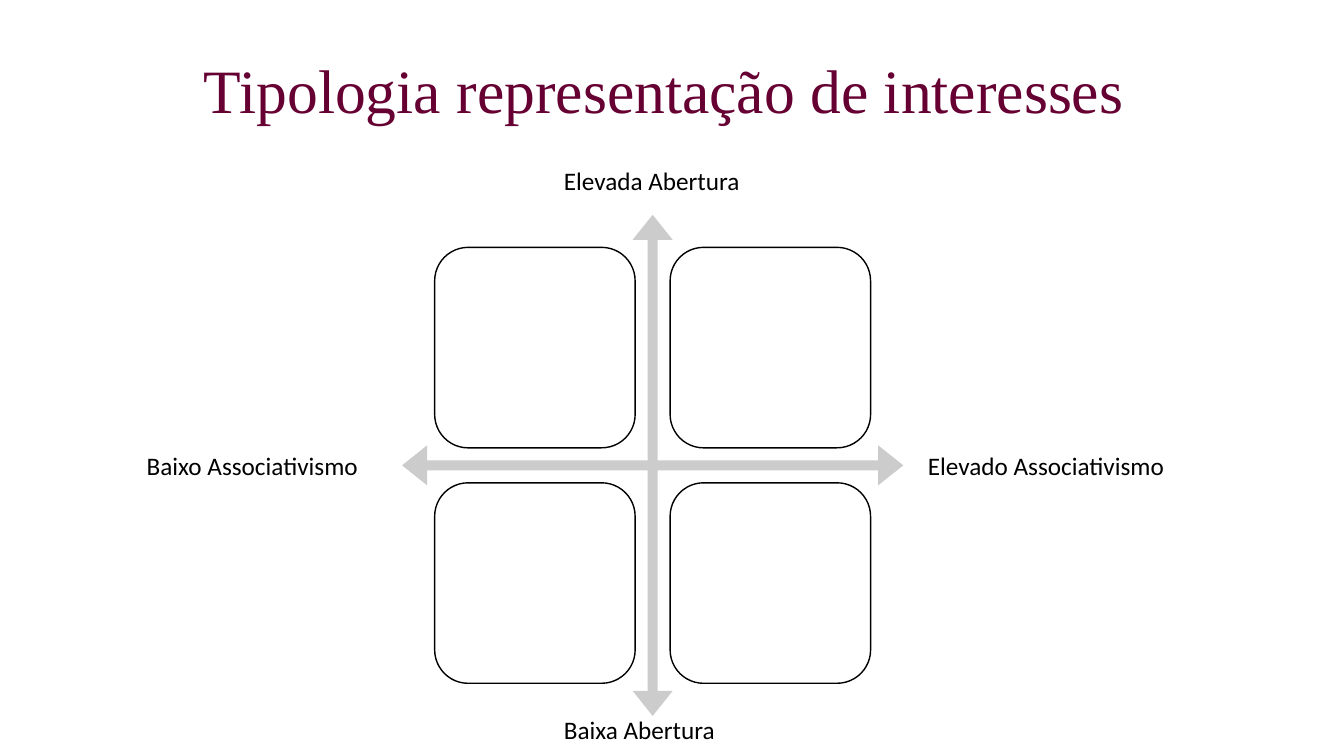
from itertools import product

from pptx import Presentation
from pptx.dml.color import RGBColor
from pptx.enum.shapes import MSO_SHAPE
from pptx.enum.text import MSO_ANCHOR, MSO_AUTO_SIZE, PP_ALIGN
from pptx.util import Pt


def color(value):
    return RGBColor.from_string(value)


def write(tf, text, font="Calibri", size=18, fill="000000",
          align=PP_ALIGN.LEFT, spacing=None):
    p = tf.paragraphs[0]
    p.alignment = align
    p.line_spacing = spacing
    r = p.add_run()
    r.text = text
    r.font.name = font
    r.font.size = Pt(size)
    r.font.color.rgb = color(fill)


class MatrixSlide:
    TITLE, ARROW, LINE, CELL = "660033", "CCCCCC", "000000", "FFFFFF"

    def __init__(self, prs):
        self.s = prs.slides.add_slide(prs.slide_layouts[6])
        self.group = self.s.shapes.add_group_shape()

    def title(self, text, x, y, w, h):
        tf = self.s.shapes.add_textbox(Pt(x), Pt(y), Pt(w), Pt(h)).text_frame
        tf.word_wrap = True
        tf.vertical_anchor = MSO_ANCHOR.MIDDLE
        write(tf, text, font="Times New Roman", size=44, fill=self.TITLE,
              align=PP_ALIGN.CENTER, spacing=0.9)

    def label(self, text, x, y, w, h=29):
        tf = self.s.shapes.add_textbox(Pt(x), Pt(y), Pt(w), Pt(h)).text_frame
        tf.word_wrap = False
        tf.auto_size = MSO_AUTO_SIZE.SHAPE_TO_FIT_TEXT
        write(tf, text)

    def square(self, kind, x, y, side, fill):
        sp = self.group.shapes.add_shape(kind, Pt(x), Pt(y), Pt(side), Pt(side))
        sp.shadow.inherit = False
        sp.fill.solid()
        sp.fill.fore_color.rgb = color(fill)
        return sp

    def axes(self, cx, cy, side):
        sp = self.square(MSO_SHAPE.QUAD_ARROW, cx - side / 2, cy - side / 2,
                         side, self.ARROW)
        sp.line.fill.background()
        for i, value in enumerate((0.02, 0.04, 0.05)):
            sp.adjustments[i] = value

    def quadrant(self, x, y, side):
        sp = self.square(MSO_SHAPE.ROUNDED_RECTANGLE, x, y, side, self.CELL)
        sp.line.color.rgb = color(self.LINE)
        sp.line.width = Pt(1)


def main():
    prs = Presentation()
    prs.slide_width, prs.slide_height = Pt(960), Pt(540)
    slide = MatrixSlide(prs)

    # Title; its trailing space counts in the centring
    slide.title("Tipologia representação de interesses ", 66, 28.75, 828, 76)

    # Crossed axes with one quadrant in each corner
    cx, cy, side, gap = 466.2, 332.4, 143.2, 25
    slide.axes(cx, cy, 358)
    left, top = cx - gap / 2 - side, cy - gap / 2 - side
    for row, col in product(range(2), repeat=2):
        slide.quadrant(left + col * (side + gap), top + row * (side + gap), side)

    # Axis end labels
    for text, x, y, w in (
        ("Elevada Abertura", 395.7, 114.8, 141),
        ("Baixa Abertura", 395.7, 506.9, 123),
        ("Baixo Associativismo", 97.7, 318.2, 167),
        ("Elevado Associativismo", 655.7, 318.2, 185),
    ):
        slide.label(text, x, y, w)

    prs.save("out.pptx")


if __name__ == "__main__":
    main()
